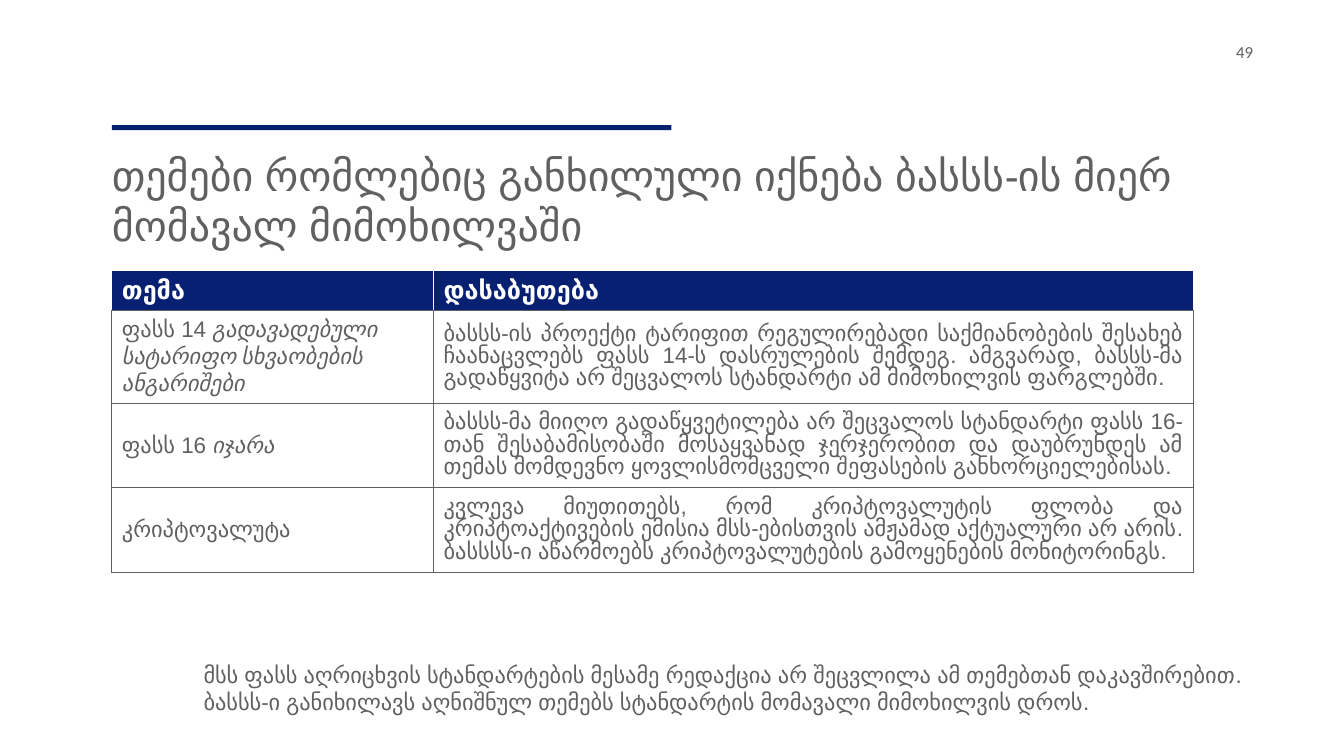
"""Build the slide on topics deferred to the board's next review."""
from dataclasses import dataclass

from lxml import etree
from pptx import Presentation
from pptx.dml.color import RGBColor
from pptx.enum.shapes import MSO_SHAPE
from pptx.enum.text import MSO_ANCHOR, PP_ALIGN
from pptx.oxml.ns import qn
from pptx.slide import Slide
from pptx.table import _Cell
from pptx.text.text import TextFrame
from pptx.util import Emu, Pt

EMU_PER_PX = 9144
RECTANGLE = MSO_SHAPE.RECTANGLE
TOP, MIDDLE = MSO_ANCHOR.TOP, MSO_ANCHOR.MIDDLE
LEFT, JUSTIFY = PP_ALIGN.LEFT, PP_ALIGN.JUSTIFY
NAVY = RGBColor(0x07, 0x21, 0x71)
HEADER_NAVY = RGBColor(0x07, 0x20, 0x71)
GREY = RGBColor(0x5F, 0x60, 0x61)
WHITE = RGBColor(0xFF, 0xFF, 0xFF)
BORDER_SIDES = ("L", "R", "T", "B")
COLUMN_WIDTHS = (319, 754)
HEADER_HEIGHT = 40
HEADINGS = ("თემა", "დასაბუთება")


@dataclass(frozen=True)
class Block:
    """A rectangle, optionally filled, with optional text."""

    left: int
    top: int
    width: int
    height: int
    text: str = ""
    size: int = 16
    font: str = "Arial"
    fill: RGBColor | None = None
    anchor: MSO_ANCHOR = TOP
    margin: int = 0


@dataclass(frozen=True)
class Topic:
    """A table row: the standard, its italic title and the reasoning."""

    height: int
    standard: str
    title: str
    reasoning: str


BLOCKS = (
    Block(111, 124, 555, 5, fill=NAVY),
    Block(111, 148, 1114, 72,
          "თემები რომლებიც განხილული იქნება ბასსს-ის მიერ მომავალ მიმოხილვაში", 30),
    Block(1226, 41, 67, 29, "49", 12, "Calibri"),
    Block(192, 656, 1079, 53,
          "მსს ფასს აღრიცხვის სტანდარტების მესამე რედაქცია არ შეცვლილა ამ თემებთან "
          "დაკავშირებით. ბასსს-ი განიხილავს აღნიშნულ თემებს სტანდარტის მომავალი "
          "მიმოხილვის დროს.", fill=WHITE, anchor=MIDDLE, margin=10),
)
TOPICS = (
    Topic(92, "ფასს 14 ", "გადავადებული სატარიფო სხვაობების ანგარიშები",
          "ბასსს-ის პროექტი ტარიფით რეგულირებადი საქმიანობების შესახებ ჩაანაცვლებს "
          "ფასს 14-ს დასრულების შემდეგ. ამგვარად, ბასსს-მა გადაწყვიტა არ შეცვალოს "
          "სტანდარტი ამ მიმოხილვის ფარგლებში."),
    Topic(84, "ფასს 16 ", "იჯარა",
          "ბასსს-მა მიიღო გადაწყვეტილება არ შეცვალოს სტანდარტი ფასს 16-თან "
          "შესაბამისობაში მოსაყვანად ჯერჯერობით და დაუბრუნდეს ამ თემას მომდევნო "
          "ყოვლისმომცველი შეფასების განხორციელებისას."),
    Topic(84, "კრიპტოვალუტა", "",
          "კვლევა მიუთითებს, რომ კრიპტოვალუტის ფლობა და კრიპტოაქტივების ემისია "
          "მსს-ებისთვის ამჟამად აქტუალური არ არის. ბასსსს-ი აწარმოებს "
          "კრიპტოვალუტების გამოყენების მონიტორინგს."),
)


def px(length: int) -> Emu:
    """Turn pixels into EMU."""
    return Emu(length * EMU_PER_PX)


def write(frame: TextFrame, text: str, size: int, font: str = "Arial",
          color: RGBColor = GREY, bold: bool = False,
          alignment: PP_ALIGN = LEFT, spacing: float = 1.0) -> None:
    """Fill a text frame with one uniformly styled paragraph."""
    paragraph = frame.paragraphs[0]
    paragraph.add_run().text = text
    paragraph.alignment = alignment
    paragraph.line_spacing = spacing
    paragraph.font.size = Pt(size)
    paragraph.font.name = font
    paragraph.font.bold = bold
    paragraph.font.color.rgb = color


def add_block(slide: Slide, block: Block) -> None:
    """Draw a filled rectangle or a plain text box."""
    box = tuple(px(n) for n in (block.left, block.top, block.width, block.height))
    if block.fill is None:
        shape = slide.shapes.add_textbox(*box)
    else:
        shape = slide.shapes.add_shape(RECTANGLE, *box)
        shape.shadow.inherit = False
        shape.fill.solid()
        shape.fill.fore_color.rgb = block.fill
        shape.line.fill.background()
    if block.text:
        frame = shape.text_frame
        frame.word_wrap = True
        frame.vertical_anchor = block.anchor
        frame.margin_left = frame.margin_right = px(block.margin)
        frame.margin_top = frame.margin_bottom = 0
        write(frame, block.text, block.size, block.font)


def style_cell(cell: _Cell, fill: RGBColor, borders: tuple[RGBColor, ...]) -> None:
    """Set a cell's anchor, fill and four borders."""
    cell.vertical_anchor = MIDDLE
    properties = cell._tc.get_or_add_tcPr()
    for side, color in zip(BORDER_SIDES, borders):
        line = etree.SubElement(properties, qn(f"a:ln{side}"), w=str(Pt(1)))
        solid = etree.SubElement(line, qn("a:solidFill"))
        etree.SubElement(solid, qn("a:srgbClr"), val=str(color))
    cell.fill.solid()
    cell.fill.fore_color.rgb = fill


def add_topic_table(slide: Slide) -> None:
    """Draw the table of topics and reasons."""
    heights = (HEADER_HEIGHT, *(topic.height for topic in TOPICS))
    table = slide.shapes.add_table(
        len(heights), len(COLUMN_WIDTHS), px(111), px(268),
        px(sum(COLUMN_WIDTHS)), px(sum(heights))).table
    table.first_row = table.horz_banding = False
    for column, width in zip(table.columns, COLUMN_WIDTHS):
        column.width = px(width)
    for row, height in zip(table.rows, heights):
        row.height = px(height)
    for cell, heading in zip(table.rows[0].cells, HEADINGS):
        style_cell(cell, HEADER_NAVY, (WHITE, WHITE, WHITE, GREY))
        write(cell.text_frame, heading, 18, color=WHITE, bold=True)
    for index, topic in enumerate(TOPICS, start=1):
        name_cell, reason_cell = table.rows[index].cells
        for cell in (name_cell, reason_cell):
            style_cell(cell, WHITE, (GREY,) * 4)
        write(name_cell.text_frame, topic.standard, 16)
        if topic.title:
            title = name_cell.text_frame.paragraphs[0].add_run()
            title.text = topic.title
            title.font.name = "Calibri"
            title.font.italic = True
        write(reason_cell.text_frame, topic.reasoning, 16,
              alignment=JUSTIFY, spacing=0.9)


def main() -> None:
    """Build and save the slide."""
    presentation = Presentation()
    presentation.slide_width, presentation.slide_height = px(1333), px(750)
    slide = presentation.slides.add_slide(presentation.slide_layouts[6])
    for block in BLOCKS:
        add_block(slide, block)
    add_topic_table(slide)
    presentation.save("out.pptx")


if __name__ == "__main__":
    main()
